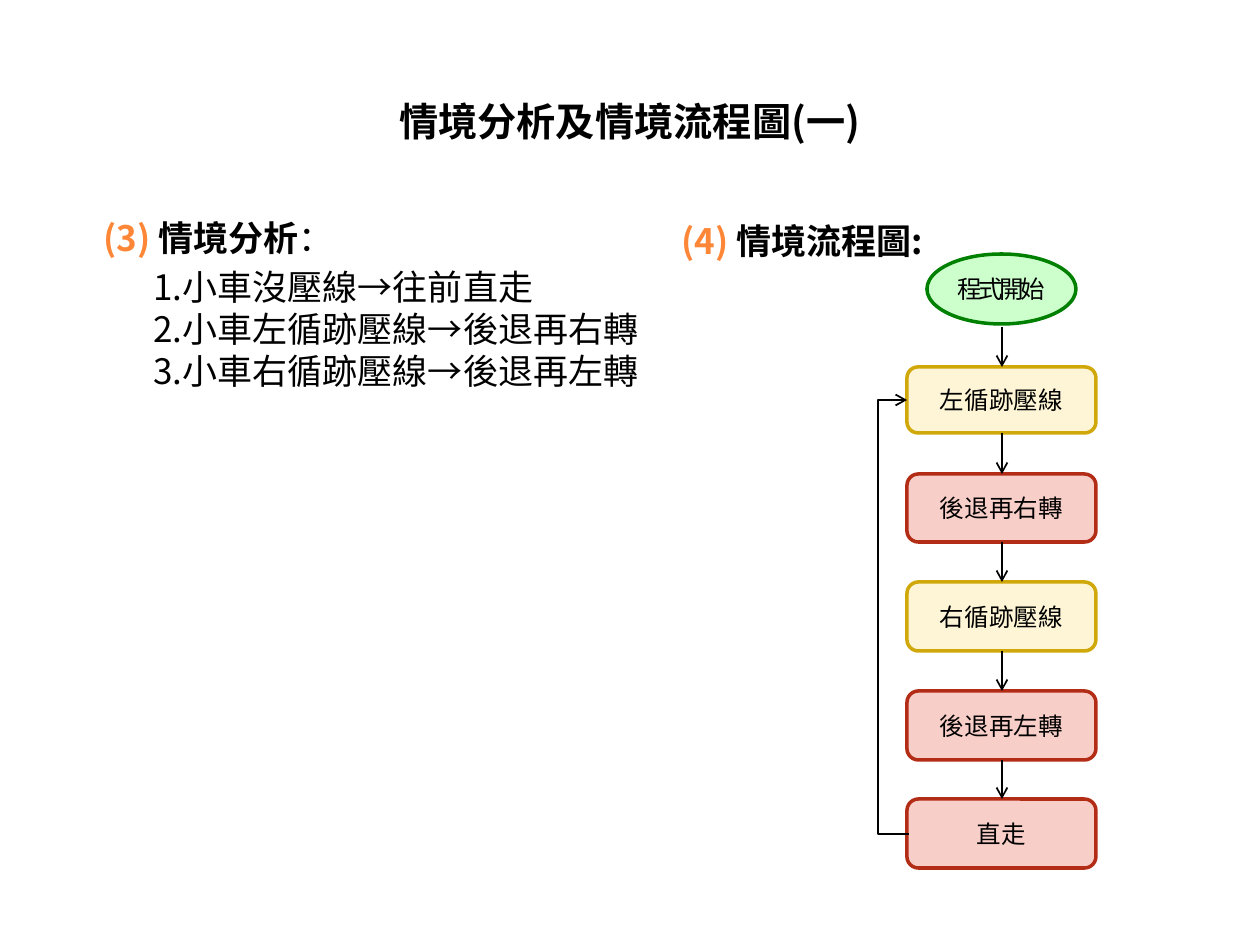
"""Build the slide with the situation analysis and its flowchart."""
from pptx import Presentation
from pptx.dml.color import RGBColor
from pptx.enum.shapes import MSO_CONNECTOR, MSO_SHAPE
from pptx.enum.text import MSO_ANCHOR, PP_ALIGN
from pptx.oxml.ns import qn
from pptx.oxml.xmlchemy import OxmlElement
from pptx.util import Emu, Pt

PX = 914400 // 126
SANS, SERIF = "Noto Sans CJK SC", "TeX Gyre Schola"
BLACK = RGBColor(0x00, 0x00, 0x00)
ORANGE = RGBColor(0xFE, 0x86, 0x37)
GREEN, PALE_GREEN = RGBColor(0x00, 0x80, 0x00), RGBColor(0xCC, 0xFF, 0xCC)
GOLD, CREAM = RGBColor(0xD0, 0xA8, 0x0A), RGBColor(0xFD, 0xF5, 0xD5)
RED, PINK = RGBColor(0xB3, 0x2C, 0x16), RGBColor(0xF8, 0xCF, 0xC8)


def style(paragraph, size, typeface=SANS):
    font = paragraph.font
    font.name, font.size = typeface, Pt(size)
    font.color.rgb = BLACK
    properties = paragraph._p.pPr.find(qn("a:defRPr"))
    east_asian = OxmlElement("a:ea")
    east_asian.set("typeface", SANS)
    properties.find(qn("a:latin")).addnext(east_asian)
    return properties


def connect(kind, x1, y1, x2, y2):
    connector = slide.shapes.add_connector(kind, *(Emu(v * PX) for v in (x1, y1, x2, y2)))
    connector.line.color.rgb = BLACK
    connector.line.width = Pt(1)
    arrowhead = OxmlElement("a:tailEnd")
    arrowhead.set("type", "arrow")
    connector.line._get_or_add_ln().append(arrowhead)
    connector._element.spPr.append(OxmlElement("a:effectLst"))
    return connector


prs = Presentation()
prs.slide_width, prs.slide_height = Emu(1260 * PX), Emu(945 * PX)
slide = prs.slides.add_slide(prs.slide_layouts[6])

title = slide.shapes.add_textbox(*(Emu(v * PX) for v in (63, 38, 1134, 158))).text_frame
title.word_wrap = True
title.vertical_anchor = MSO_ANCHOR.MIDDLE
heading = title.paragraphs[0]
heading.text = "情境分析及情境流程圖(一)"
heading.alignment = PP_ALIGN.CENTER
style(heading, 28).set("cap", "small")
heading.font.bold = True

sections = [
    ((91, 210, 678, 238), True, [("(3) ", ORANGE, True), ("情境分析", BLACK, True), ("：", BLACK, False)]),
    ((669, 213, 266, 55), False, [("(4) ", ORANGE, True), ("情境流程圖:", BLACK, True)]),
]
frames = []
for box, wrap, parts in sections:
    frame = slide.shapes.add_textbox(*(Emu(v * PX) for v in box)).text_frame
    frame.word_wrap = wrap
    heading = frame.paragraphs[0]
    heading.line_spacing = Pt(24)
    style(heading, 20)
    for text, color, bold in parts:
        run = heading.add_run()
        run.text = text
        run.font.color.rgb = color
        run.font.bold = bold
    frames.append(frame)

situations = frames[0].add_paragraph()
situations.text = "1.小車沒壓線→往前直走\v2.小車左循跡壓線→後退再右轉\v3.小車右循跡壓線→後退再左轉"
situations.line_spacing, situations.space_before = Pt(24), Pt(4)
style(situations, 20)
situations._p.pPr.set("marL", str(50 * PX))
situations._p.pPr.set("indent", "0")

steps = [
    ("程式開始", MSO_SHAPE.OVAL, (927, 254, 149, 70), PALE_GREEN, GREEN, SANS),
    ("左循跡壓線", MSO_SHAPE.ROUNDED_RECTANGLE, (907, 367, 189, 66), CREAM, GOLD, SERIF),
    ("後退再右轉", MSO_SHAPE.ROUNDED_RECTANGLE, (907, 474, 189, 68), PINK, RED, SANS),
    ("右循跡壓線", MSO_SHAPE.ROUNDED_RECTANGLE, (907, 582, 189, 69), CREAM, GOLD, SANS),
    ("後退再左轉", MSO_SHAPE.ROUNDED_RECTANGLE, (907, 691, 189, 69), PINK, RED, SANS),
    ("直走", MSO_SHAPE.ROUNDED_RECTANGLE, (907, 799, 189, 69), PINK, RED, SANS),
]
for text, outline, box, fill, border, typeface in steps:
    step = slide.shapes.add_shape(outline, *(Emu(v * PX) for v in box))
    step.shadow.inherit = False
    step.fill.solid()
    step.fill.fore_color.rgb = fill
    step.line.color.rgb = border
    step.line.width = Pt(2)
    frame = step.text_frame
    frame.word_wrap = True
    frame.vertical_anchor = MSO_ANCHOR.MIDDLE
    label = frame.paragraphs[0]
    label.text = text
    label.alignment = PP_ALIGN.CENTER
    properties = style(label, 14, typeface)
    if outline == MSO_SHAPE.OVAL:
        frame.margin_left = frame.margin_right = 0
        properties.set("spc", "-200")

boxes = [step[2] for step in steps]
for index, (upper, lower) in enumerate(zip(boxes, boxes[1:])):
    gap = 3 if index == 0 else 0
    connect(MSO_CONNECTOR.STRAIGHT, 1002, upper[1] + upper[3] + gap, 1002, lower[1])

loop = connect(MSO_CONNECTOR.ELBOW, 907, 400, 909, 834)
loop._element.spPr.find(qn("a:xfrm")).set("rot", "10800000")
bend = OxmlElement("a:gd")
bend.set("name", "adj1")
bend.set("fmla", "val 1550000")
loop._element.spPr.find(qn("a:prstGeom")).get_or_add_avLst().append(bend)

prs.save("out.pptx")
